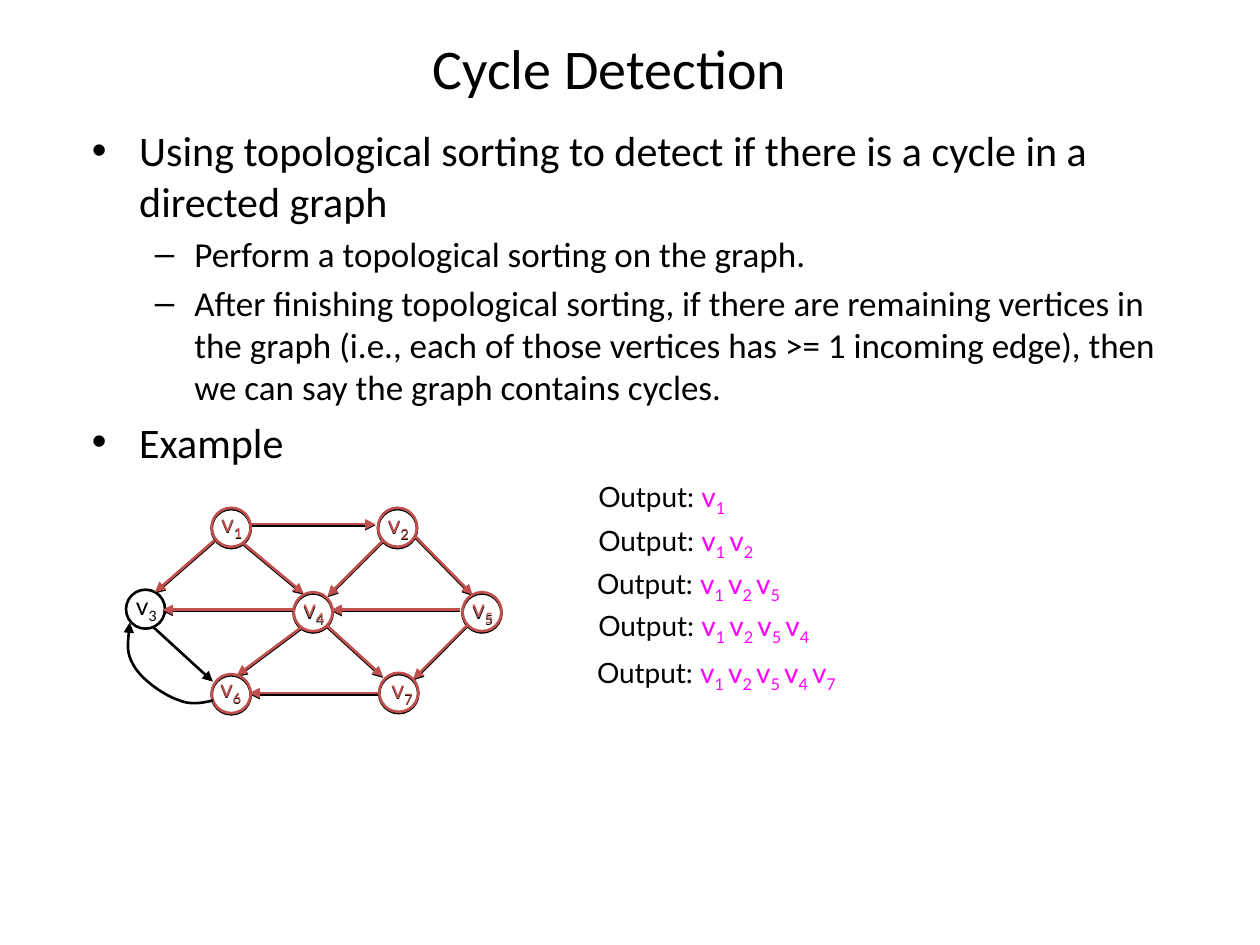
from lxml.etree import SubElement
from pptx import Presentation
from pptx.dml.color import RGBColor
from pptx.enum.shapes import MSO_CONNECTOR, MSO_SHAPE
from pptx.enum.text import MSO_ANCHOR, MSO_AUTO_SIZE, PP_ALIGN
from pptx.oxml.ns import qn
from pptx.util import Inches, Pt

# Content
TITLE = "Cycle Detection "
BULLETS = [
    (0, "Using topological sorting to detect if there is a cycle in a directed graph"),
    (1, "Perform a topological sorting on the graph."),
    (1, "After finishing topological sorting, if there are remaining vertices in the "
        "graph (i.e., each of those vertices has >= 1 incoming edge), then we can say "
        "the graph contains cycles."),
    (0, "Example"),
]
BULLET_SIZES = {0: 24, 1: 20}

# Vertex: circle left and top, then label offset from the circle
VERTICES = {
    3: (1.00, 4.68, -0.02, -0.04),
    6: (1.68, 5.36, -0.03, -0.06),
    4: (2.33, 4.71, -0.02, -0.04),
    2: (3.00, 4.04, -0.02, -0.04),
    7: (3.01, 5.35, 0.00, -0.04),
    5: (3.67, 4.71, -0.02, -0.04),
    1: (1.68, 4.04, -0.02, -0.05),
}
# Edge: source vertex, start point, end point
EDGES = [
    (3, (1.22, 4.98), (1.69, 5.41)),
    (2, (3.29, 4.26), (3.75, 4.73)),
    (5, (3.71, 4.97), (3.28, 5.40)),
    (2, (3.04, 4.30), (2.60, 4.74)),
    (5, (3.65, 4.85), (2.63, 4.85)),
    (4, (2.59, 4.97), (3.04, 5.38)),
    (7, (3.01, 5.51), (1.98, 5.51)),
    (4, (2.33, 4.85), (1.29, 4.85)),
    (4, (2.39, 4.99), (1.88, 5.37)),
    (1, (1.70, 4.30), (1.23, 4.71)),
    (1, (1.98, 4.17), (2.98, 4.17)),
    (1, (1.93, 4.32), (2.41, 4.72)),
]
# Back edge from v6 to v3: start point, then three points per Bezier segment
BACK_EDGE = [(1.69, 5.56), (1.60, 5.58), (1.51, 5.60), (1.40, 5.55),
             (1.29, 5.51), (1.12, 5.39), (1.06, 5.28),
             (1.00, 5.18), (1.02, 5.06), (1.03, 4.94)]
REMOVAL_ORDER = [1, 2, 5, 4, 7]
OUTPUT_PLACES = [(4.65, 3.76), (4.65, 4.11), (4.64, 4.45), (4.65, 4.78), (4.64, 5.15)]

BLACK, RED, MAGENTA = "000000", "C0504D", "FF00FF"
DIAMETER = 0.31
RED_SHIFT = -0.01
REMAINING_VERTEX = 3


def color(value):
    return RGBColor.from_string(value)


def style_run(run, size, font, value, subscript=False):
    run.font.size = Pt(size)
    run.font.name = font
    run.font.color.rgb = color(value)
    if subscript:
        run.font._element.set("baseline", "-25000")


def style_line(shape, value, arrow=False):
    shape.line.color.rgb = color(value)
    shape.line.width = Pt(1.5)
    if arrow:
        SubElement(shape.line._get_or_add_ln(), qn("a:tailEnd"), type="triangle")


def add_text(slide, left, top, width, height, pieces, size, wrap):
    """Write pieces of (text, colour, subscript) on one line."""
    box = slide.shapes.add_textbox(*map(Inches, (left, top, width, height)))
    box.text_frame.word_wrap = wrap
    box.text_frame.auto_size = MSO_AUTO_SIZE.SHAPE_TO_FIT_TEXT
    for text, value, subscript in pieces:
        run = box.text_frame.paragraphs[0].add_run()
        run.text = text
        style_run(run, size, "Lato", value, subscript)


def add_vertex(slide, number, value, shift):
    left, top, label_x, label_y = VERTICES[number]
    circle = slide.shapes.add_shape(
        MSO_SHAPE.OVAL, *map(Inches, (left, top + shift, DIAMETER, DIAMETER)))
    circle.shadow.inherit = False
    circle.fill.background()
    style_line(circle, value)
    add_text(slide, left + label_x, top + label_y + shift, 0.37, 0.34,
             [("v", value, False), (str(number), value, True)], 14, False)


def add_edge(slide, start, end, value, shift):
    edge = slide.shapes.add_connector(
        MSO_CONNECTOR.STRAIGHT, Inches(start[0]), Inches(start[1] + shift),
        Inches(end[0]), Inches(end[1] + shift))
    style_line(edge, value, arrow=True)
    SubElement(edge.element.spPr, qn("a:effectLst"))


def add_curve(slide, points):
    start, *rest = [(Inches(x), Inches(y)) for x, y in points]
    builder = slide.shapes.build_freeform(*start)
    builder.add_line_segments(rest, close=False)
    curve = builder.convert_to_shape()
    # Merge every three straight segments into one Bezier segment
    segments = list(curve.element.iter(qn("a:lnTo")))
    for first, second, third in zip(segments[::3], segments[1::3], segments[2::3]):
        first.tag = qn("a:cubicBezTo")
        for segment in (second, third):
            first.append(segment[0])
            segment.getparent().remove(segment)
    curve.shadow.inherit = False
    curve.fill.background()
    style_line(curve, BLACK, arrow=True)


def place(shape, left, top, width, height):
    shape.left, shape.top, shape.width, shape.height = map(
        Inches, (left, top, width, height))


def main():
    presentation = Presentation()
    presentation.slide_width, presentation.slide_height = Inches(10), Inches(7.5)
    slide = presentation.slides.add_slide(presentation.slide_layouts[1])

    # Title
    title = slide.shapes.title
    place(title, 0.64, 0.2, 8.5, 0.67)
    title.text_frame.text = TITLE
    title.text_frame.vertical_anchor = MSO_ANCHOR.MIDDLE
    title.text_frame.auto_size = MSO_AUTO_SIZE.NONE
    paragraph = title.text_frame.paragraphs[0]
    paragraph.alignment = PP_ALIGN.CENTER
    style_run(paragraph.runs[0], 32, "Calibri", BLACK)

    # Bullets
    body = slide.placeholders[1]
    place(body, 0.63, 0.94, 8.9, 6.18)
    body.text_frame.text = "\n".join(text for _, text in BULLETS)
    body.text_frame.auto_size = MSO_AUTO_SIZE.NONE
    for paragraph, (level, _) in zip(body.text_frame.paragraphs, BULLETS):
        paragraph.level = level
        style_run(paragraph.runs[0], BULLET_SIZES[level], "Calibri", BLACK)

    # Graph in black, then the removed vertices and their edges in red on top
    for value, shift in ((BLACK, 0), (RED, RED_SHIFT)):
        for number in VERTICES:
            if value == BLACK or number != REMAINING_VERTEX:
                add_vertex(slide, number, value, shift)
        for source, start, end in EDGES:
            if value == BLACK or source != REMAINING_VERTEX:
                add_edge(slide, start, end, value, shift)
    add_curve(slide, BACK_EDGE)

    # Output after each removal
    for count, (left, top) in enumerate(OUTPUT_PLACES, start=1):
        pieces = [("Output: ", BLACK, False)]
        for index, number in enumerate(REMOVAL_ORDER[:count], start=1):
            gap = " " if index < count else ""
            pieces += [("v", MAGENTA, False), (f"{number}{gap}", MAGENTA, True)]
        add_text(slide, left, top, 2.52, 0.37, pieces, 16, True)

    presentation.save("out.pptx")


if __name__ == "__main__":
    main()
